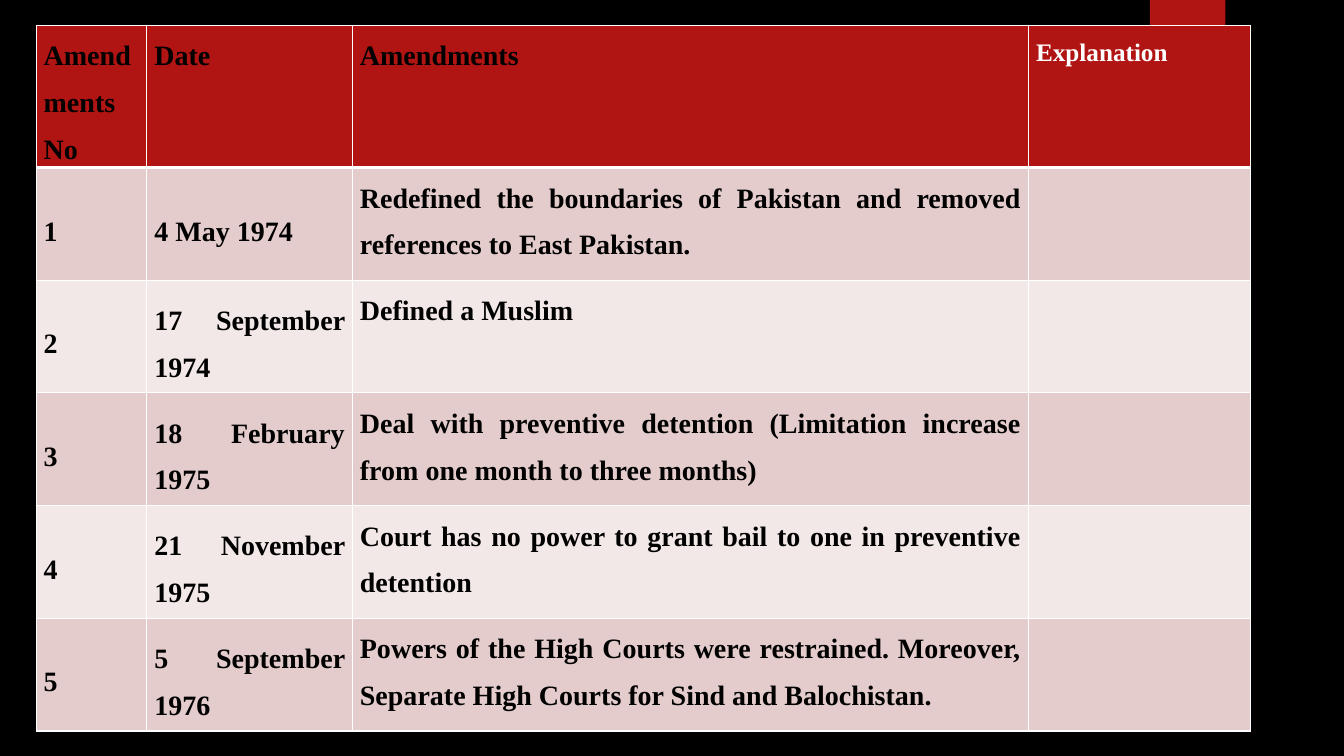
from lxml import etree
from pptx import Presentation
from pptx.dml.color import RGBColor
from pptx.enum import shapes, text
from pptx.oxml import ns
from pptx.util import Cm, Pt

BLACK, WHITE, RED = "000000", "FFFFFF", "B01513"
BANDS = ("E4CCCC", "F2E8E7")
FONT = "Times New Roman"
COLUMN_WIDTHS = (2.79, 5.18, 17.04, 5.59)
HEADER_HEIGHT, ROW_HEIGHT = 3.58, 2.84

HEADINGS = ("Amendments No", "Date", "Amendments", "Explanation")
AMENDMENTS = (
    ("4 May 1974", "Redefined the boundaries of Pakistan and removed references to East Pakistan."),
    ("17 September 1974", "Defined a Muslim"),
    ("18 February 1975", "Deal with preventive detention (Limitation increase from one month to three months)"),
    ("21 November 1975", "Court has no power to grant bail to one in preventive detention"),
    ("5 September 1976", "Powers of the High Courts were restrained. Moreover, "
                         "Separate High Courts for Sind and Balochistan."),
)


def paint(fill, color):
    fill.solid()
    fill.fore_color.rgb = RGBColor.from_string(color)


def add_bookmark(slide):
    bookmark = slide.shapes.add_shape(
        shapes.MSO_SHAPE.RECTANGLE, Cm(28.98), Cm(0), Cm(1.9), Cm(3.18))
    bookmark.shadow.inherit = False
    paint(bookmark.fill, RED)
    bookmark.line.fill.background()


def add_borders(cell, top=1, bottom=1):
    properties = cell._tc.get_or_add_tcPr()
    for side, points in (("L", 1), ("R", 1), ("T", top), ("B", bottom)):
        border = etree.SubElement(properties, ns.qn(f"a:ln{side}"), w=str(Pt(points)))
        solid = etree.SubElement(border, ns.qn("a:solidFill"))
        etree.SubElement(solid, ns.qn("a:srgbClr"), val=WHITE)


def write_cell(cell, words, size=20, color=BLACK, middle=False):
    cell.margin_left = cell.margin_right = Cm(0.19)
    cell.margin_top = cell.margin_bottom = Cm(0)
    if middle:
        cell.vertical_anchor = text.MSO_ANCHOR.MIDDLE
    paragraph = cell.text_frame.paragraphs[0]
    paragraph.text = words
    paragraph.alignment = text.PP_ALIGN.JUSTIFY
    paragraph.line_spacing = 1.5
    for run in paragraph.runs:
        run.font.name = FONT
        run.font.size = Pt(size)
        run.font.bold = True
        run.font.color.rgb = RGBColor.from_string(color)


def add_amendment_table(slide):
    row_count = len(AMENDMENTS) + 1
    table = slide.shapes.add_table(
        row_count, len(HEADINGS), Cm(0.91), Cm(0.64), Cm(sum(COLUMN_WIDTHS)),
        Cm(HEADER_HEIGHT + ROW_HEIGHT * len(AMENDMENTS))).table
    for column, width in zip(table.columns, COLUMN_WIDTHS):
        column.width = Cm(width)
    for index, row in enumerate(table.rows):
        row.height = Cm(ROW_HEIGHT if index else HEADER_HEIGHT)

    # Header row, with a heavy rule below it
    for column, heading in enumerate(HEADINGS):
        cell = table.cell(0, column)
        add_borders(cell, bottom=3)
        paint(cell.fill, RED)
        if heading == "Explanation":
            write_cell(cell, heading, 18, WHITE)
        else:
            write_cell(cell, heading)

    # Numbered amendments in alternating bands, explanations left open
    for number, (date, change) in enumerate(AMENDMENTS, 1):
        for column, words in enumerate((str(number), date, change, "")):
            cell = table.cell(number, column)
            add_borders(cell, top=3 if number == 1 else 1)
            paint(cell.fill, BANDS[(number - 1) % 2])
            if words:
                write_cell(cell, words, middle=column < 2)


def main():
    presentation = Presentation()
    presentation.slide_width, presentation.slide_height = Cm(33.87), Cm(19.05)
    slide = presentation.slides.add_slide(presentation.slide_layouts[6])
    paint(slide.background.fill, BLACK)
    add_bookmark(slide)
    add_amendment_table(slide)
    presentation.save("out.pptx")


if __name__ == "__main__":
    main()
